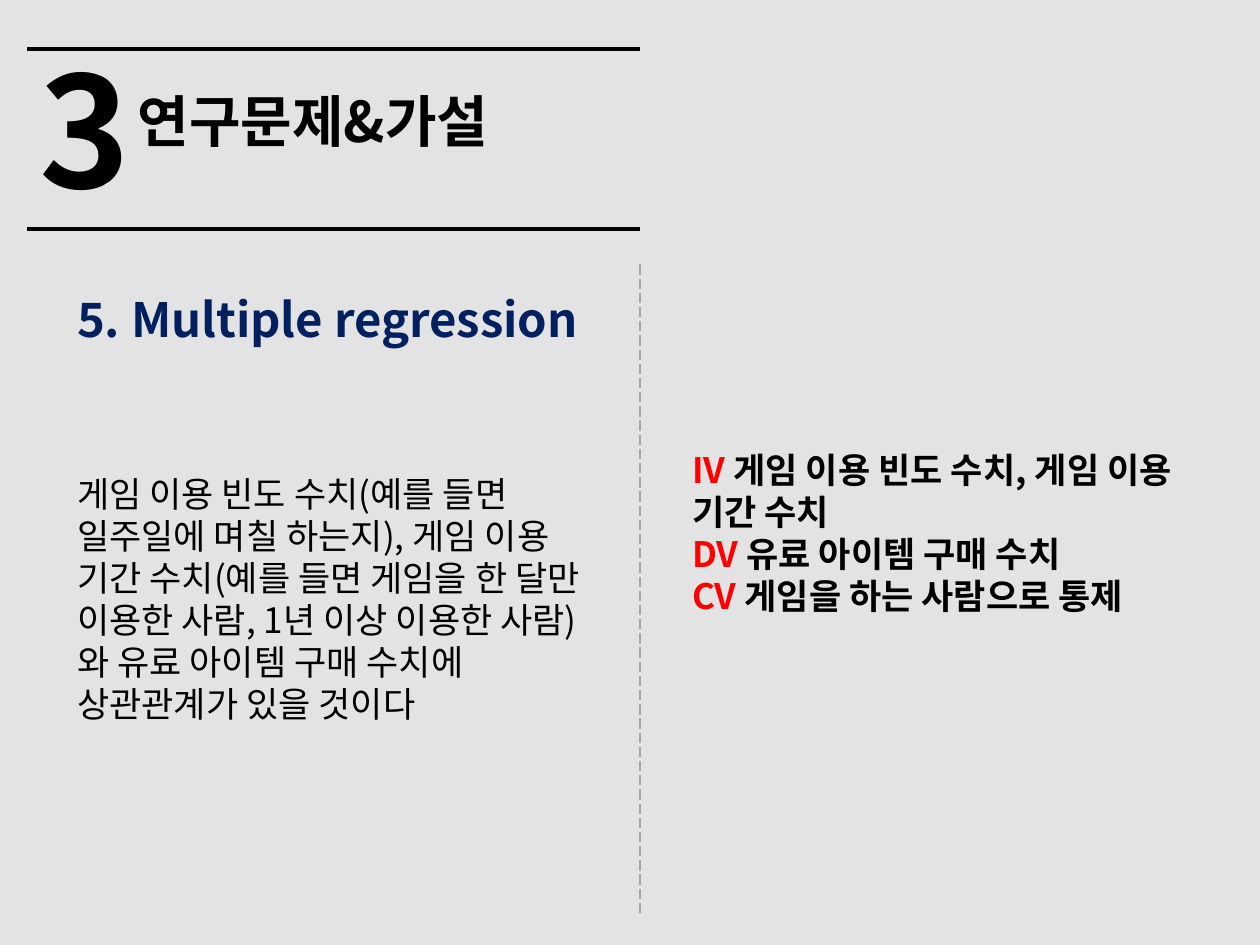
from lxml import etree
from pptx import Presentation
from pptx.dml.color import RGBColor
from pptx.enum.dml import MSO_LINE
from pptx.enum.shapes import MSO_CONNECTOR
from pptx.enum.text import MSO_ANCHOR, MSO_AUTO_SIZE, PP_ALIGN
from pptx.oxml.ns import qn
from pptx.util import Cm, Pt

STRAIGHT = MSO_CONNECTOR.STRAIGHT
LONG_DASH = MSO_LINE.LONG_DASH
TOP = MSO_ANCHOR.TOP
NO_FIT = MSO_AUTO_SIZE.NONE
LEFT = PP_ALIGN.LEFT

FONT = "Noto Sans CJK KR"
COLORS = {
    "background": "E3E3E3",
    "text": "000000",
    "heading": "002060",
    "label": "FF0000",
    "divider": "A6A6A6",
}


def add_run(paragraph, text, size=20, color="text", bold=True):
    run = paragraph.add_run()
    run.text = text
    run.font.name = FONT
    run.font.size = Pt(size)
    run.font.bold = bold
    run.font.color.rgb = RGBColor.from_string(COLORS[color])
    etree.SubElement(run.font._element, qn("a:ea"), typeface=FONT)


class SlideBuilder:
    def __init__(self, slide):
        self.slide = slide
        fill = slide.background.fill
        fill.solid()
        fill.fore_color.rgb = RGBColor.from_string(COLORS["background"])

    def place(self, holder, left, top, width, height):
        holder.left, holder.top = Cm(left), Cm(top)
        holder.width, holder.height = Cm(width), Cm(height)
        frame = holder.text_frame
        frame.word_wrap = True
        frame.auto_size = NO_FIT
        frame.vertical_anchor = TOP
        return frame

    def paragraph(self, frame, first=False, space_before=0):
        paragraph = frame.paragraphs[0] if first else frame.add_paragraph()
        paragraph.alignment = LEFT
        paragraph.space_before = Pt(space_before)
        properties = paragraph._p.get_or_add_pPr()
        properties.set("marL", "0")
        properties.set("indent", "0")
        etree.SubElement(properties, qn("a:buNone"))
        return paragraph

    def title(self, text, *box):
        frame = self.place(self.slide.shapes.title, *box)
        add_run(self.paragraph(frame, first=True), text, size=32)

    def number(self, text, *box):
        frame = self.place(self.slide.shapes.add_textbox(0, 0, 0, 0), *box)
        add_run(self.paragraph(frame, first=True), text, size=88)

    def hypothesis(self, heading, statement, *box):
        frame = self.place(self.slide.placeholders[1], *box)
        add_run(self.paragraph(frame, first=True), heading, size=27, color="heading")
        add_run(self.paragraph(frame, space_before=72), statement, bold=False)

    def variables(self, entries, *box):
        frame = self.place(self.slide.placeholders[2], *box)
        for index, (label, meaning) in enumerate(entries):
            paragraph = self.paragraph(frame, first=index == 0)
            add_run(paragraph, label + " ", color="label")
            add_run(paragraph, meaning)

    def line(self, x1, y1, x2, y2, color="text", width=2, dash=None):
        rule = self.slide.shapes.add_connector(STRAIGHT, Cm(x1), Cm(y1), Cm(x2), Cm(y2))
        rule.line.color.rgb = RGBColor.from_string(COLORS[color])
        rule.line.width = Pt(width)
        if dash:
            rule.line.dash_style = dash
        etree.SubElement(rule._element.spPr, qn("a:effectLst"))


def main():
    deck = Presentation()
    deck.slide_width, deck.slide_height = Cm(25.4), Cm(19.05)
    builder = SlideBuilder(deck.slides.add_slide(deck.slide_layouts[3]))

    middle = 12.9
    for y in (0.99, 4.62):
        builder.line(0.54, y, middle, y)
    builder.number("3", 0.54, 0.58, 2.1, 4.01)
    builder.title("연구문제&가설", 2.52, 1.62, 10.85, 1.62)
    builder.hypothesis(
        "5. Multiple regression",
        "게임 이용 빈도 수치(예를 들면 일주일에 며칠 하는지), 게임 이용 기간 수치"
        "(예를 들면 게임을 한 달만 이용한 사람, 1년 이상 이용한 사람)와 "
        "유료 아이템 구매 수치에 상관관계가 있을 것이다",
        1.3, 5.72, 10.8, 9.96,
    )
    builder.variables(
        [
            ("IV", "게임 이용 빈도 수치, 게임 이용 기간 수치"),
            ("DV", "유료 아이템 구매 수치"),
            ("CV", "게임을 하는 사람으로 통제"),
        ],
        13.7, 8.92, 10.2, 4.52,
    )
    builder.line(middle, 5.33, middle, 18.42, color="divider", width=0.75, dash=LONG_DASH)
    deck.save("out.pptx")


if __name__ == "__main__":
    main()
